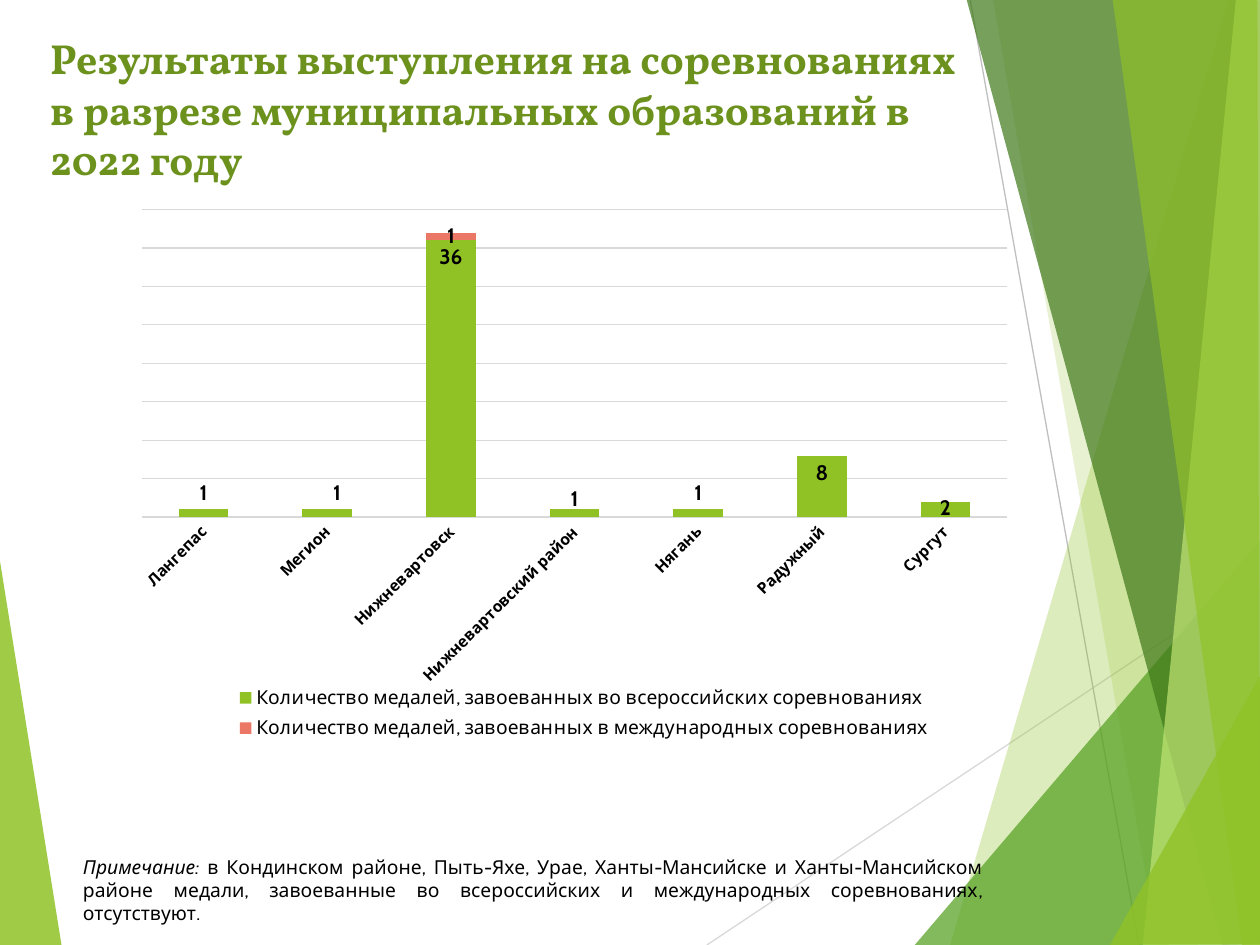
from lxml.etree import SubElement
from pptx import Presentation
from pptx.chart.data import CategoryChartData
from pptx.dml.color import RGBColor
from pptx.enum.chart import XL_CHART_TYPE, XL_LABEL_POSITION, XL_LEGEND_POSITION, XL_TICK_MARK
from pptx.enum.shapes import MSO_CONNECTOR
from pptx.enum.text import PP_ALIGN
from pptx.oxml import parse_xml
from pptx.oxml.ns import nsdecls, qn
from pptx.util import Inches, Pt

TITLE = "Результаты выступления на соревнованиях в разрезе муниципальных образований в 2022 году"
NOTE = [
    ("Примечание:", True),
    (" в Кондинском районе, Пыть-Яхе, Урае, Ханты-Мансийске и Ханты-Мансийском районе "
     "медали, завоеванные во всероссийских и международных соревнованиях, отсутствуют.", False),
]
TOWNS = ["Лангепас", "Мегион", "Нижневартовск", "Нижневартовский район", "Нягань", "Радужный", "Сургут"]
MEDALS = [
    ("Количество медалей, завоеванных во всероссийских соревнованиях", [1, 1, 36, 1, 1, 8, 2], "90C226"),
    ("Количество медалей, завоеванных в международных соревнованиях",
     [None, None, 1, None, None, None, None], "EB7766"),
]
RAISED_LABELS = {0: (0, -0.06), 1: (0.01, -0.06), 3: (0, -0.05), 4: (0, -0.06), 6: (0, -0.02)}
PLOT_AREA = {"layoutTarget": "inner", "xMode": "edge", "yMode": "edge",
             "x": 0.09, "y": 0.03, "w": 0.89, "h": 0.55}
LEGEND_AREA = {"xMode": "edge", "yMode": "edge", "x": 0.18, "y": 0.87, "w": 0.73, "h": 0.12}
LEFT_FACET = ([(-0.01, 4.39), (0.49, 7.51), (-0.01, 7.5)], "90C226", 85)
RAYS = [((5.61, 7.5), (10.01, 4.57), "D9D9D9"), ((7.7, 0), (9.04, 7.5), "BFBFBF")]
RIGHT_FACETS = [
    ([(9.75, 0), (7.54, 7.5), (10.02, 7.51), (10.01, 0.01)], "90C226", 30),
    ([(7.88, -0.01), (9.19, 7.5), (10.01, 7.5), (10.01, -0.01)], "90C226", 20),
    ([(7.26, 7.5), (10, 4.29), (10.01, 7.5)], "54A021", 72),
    ([(7.67, -0.01), (9.7, 7.5), (10.01, 7.49), (10.01, -0.01)], "3F7819", 70),
    ([(9.81, -0.01), (9.07, 7.5), (10.01, 7.5), (10, -0.01)], "C0E474", 70),
    ([(8.83, -0.01), (9.86, 7.5), (10, 7.5), (9.98, -0.01)], "90C226", 65),
    ([(8.81, 7.5), (10.01, 5.35), (10.01, 7.49)], "90C226", 80),
]
TITLE_FONT = {"name": "Vollkorn", "size": Pt(24), "bold": True}
NOTE_FONT = {"name": "Cabin", "size": Pt(11)}
CHART_FONT = {"name": "Cabin", "size": Pt(10)}
LEGEND_FONT = {"name": "Cabin", "size": Pt(11)}
TOWN_FONT = {"name": "Cabin", "size": Pt(9), "bold": True}
LABEL_FONT = {"name": "Cabin", "size": Pt(12), "bold": True}


def color(value):
    """Turn a hex string into a colour."""
    return RGBColor.from_string(value)


def style_font(font, values, shade="000000"):
    """Apply a dict of format values and a colour to a font."""
    for name, value in values.items():
        setattr(font, name, value)
    font.color.rgb = color(shade)


def style_line(line, shade):
    """Give a line its colour and the common thin width."""
    line.color.rgb = color(shade)
    line.width = Pt(0.75)


def add_facet(page, points, shade, opacity):
    """Draw one translucent polygon."""
    corners = [(Inches(x), Inches(y)) for x, y in points]
    builder = page.shapes.build_freeform(*corners[0], scale=1.0)
    builder.add_line_segments(corners[1:], close=True)
    facet = builder.convert_to_shape()
    facet.shadow.inherit = False
    facet.fill.solid()
    facet.fill.fore_color.rgb = color(shade)
    facet.line.fill.background()
    tint = facet.fill._xPr.find(qn("a:solidFill"))[0]
    SubElement(tint, qn("a:alpha"), val=str(opacity * 1000))


def add_ray(page, start, end, shade):
    """Draw one thin background line."""
    ray = page.shapes.add_connector(MSO_CONNECTOR.STRAIGHT, *map(Inches, start + end))
    style_line(ray.line, shade)
    SubElement(ray._element.spPr, qn("a:effectLst"))


def add_text(page, place, spans, font, shade="000000", align=PP_ALIGN.LEFT):
    """Add a wrapped text box with one paragraph of spans."""
    frame = page.shapes.add_textbox(*map(Inches, place)).text_frame
    frame.word_wrap = True
    para = frame.paragraphs[0]
    para.alignment = align
    for text, italic in spans:
        span = para.add_run()
        span.text = text
        style_font(span.font, {**font, "italic": italic}, shade)


def set_layout(parent, values, position):
    """Give a chart part a manual layout as the child at a position."""
    for layout in parent.findall(qn("c:layout")):
        parent.remove(layout)
    parts = "".join(f'<c:{name} val="{value}"/>' for name, value in values.items())
    parent.insert(position, parse_xml(
        f"<c:layout {nsdecls('c')}><c:manualLayout>{parts}</c:manualLayout></c:layout>"))


def add_medal_chart(page, place):
    """Add the stacked medal chart."""
    data = CategoryChartData()
    data.categories = TOWNS
    for name, values, _ in MEDALS:
        data.add_series(name, values)
    chart = page.shapes.add_chart(XL_CHART_TYPE.COLUMN_STACKED, *map(Inches, place), data).chart
    style_font(chart.font, CHART_FONT)
    chart.has_title = False
    chart.has_legend = True
    chart.legend.position = XL_LEGEND_POSITION.BOTTOM
    chart.legend.include_in_layout = False
    style_font(chart.legend.font, LEGEND_FONT)

    plot = chart.plots[0]
    plot.gap_width, plot.overlap, plot.vary_by_categories = 150, 100, False
    for series, (_, _, shade) in zip(plot.series, MEDALS):
        series.format.fill.solid()
        series.format.fill.fore_color.rgb = color(shade)
        series.data_labels.show_value = True
        style_font(series.data_labels.font, LABEL_FONT)
    domestic = plot.series[0]
    domestic.data_labels.position = XL_LABEL_POSITION.INSIDE_END
    for index, (x, y) in RAISED_LABELS.items():
        label = domestic.points[index].data_label
        style_font(label.font, LABEL_FONT)
        label.position = XL_LABEL_POSITION.INSIDE_END
        mark = domestic._element.xpath(f"c:dLbls/c:dLbl[c:idx/@val='{index}']")[0]
        set_layout(mark, {"x": x, "y": y}, 1)

    towns, scale = chart.category_axis, chart.value_axis
    towns.major_tick_mark = XL_TICK_MARK.NONE
    style_line(towns.format.line, "D9D9D9")
    style_font(towns.tick_labels.font, TOWN_FONT)
    towns._element.find(qn("c:txPr")).find(qn("a:bodyPr")).set("rot", "-2700000")
    scale.minimum_scale, scale.maximum_scale, scale.major_unit = 0, 40, 5
    scale.has_major_gridlines = True
    style_line(scale.major_gridlines.format.line, "D9D9D9")
    scale.visible = False

    set_layout(chart.element.xpath("c:chart/c:plotArea")[0], PLOT_AREA, 0)
    set_layout(chart.element.xpath("c:chart/c:legend")[0], LEGEND_AREA, 1)


def main():
    """Build the slide and save it."""
    deck = Presentation()
    deck.slide_width, deck.slide_height = Inches(10), Inches(7.5)
    page = deck.slides.add_slide(deck.slide_layouts[6])
    add_facet(page, *LEFT_FACET)
    for ray in RAYS:
        add_ray(page, *ray)
    for facet in RIGHT_FACETS:
        add_facet(page, *facet)
    add_text(page, (0.3, 0.21, 7.61, 1.25), [(TITLE, False)], TITLE_FONT, "6C921D")
    add_medal_chart(page, (0.43, 1.53, 7.72, 4.44))
    add_text(page, (0.56, 6.74, 7.34, 0.47), NOTE, NOTE_FONT, align=PP_ALIGN.JUSTIFY)
    deck.save("out.pptx")


if __name__ == "__main__":
    main()
